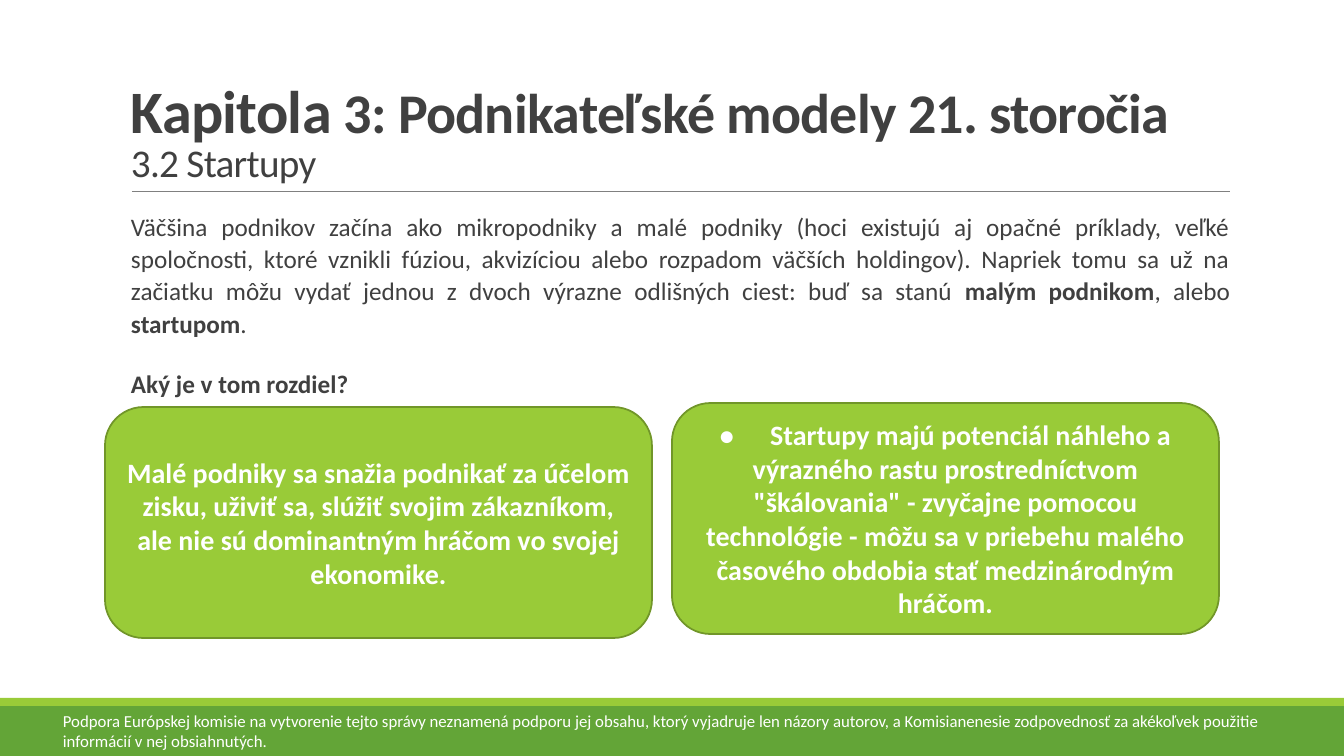
"""Build the slide on startups and small businesses."""
from lxml import etree
from pptx import Presentation
from pptx.dml.color import RGBColor
from pptx.enum.shapes import MSO_CONNECTOR, MSO_SHAPE
from pptx.enum.text import MSO_ANCHOR, PP_ALIGN
from pptx.oxml.ns import qn
from pptx.util import Pt

RECT, ROUND = MSO_SHAPE.RECTANGLE, MSO_SHAPE.ROUNDED_RECTANGLE
STRAIGHT = MSO_CONNECTOR.STRAIGHT
MIDDLE, BOTTOM = MSO_ANCHOR.MIDDLE, MSO_ANCHOR.BOTTOM
CENTER, JUSTIFY = PP_ALIGN.CENTER, PP_ALIGN.JUSTIFY

THEME = {
    "font": "Calibri",
    "green": RGBColor(0x63, 0xA5, 0x37),
    "lime": RGBColor(0x99, 0xCB, 0x38),
    "edge": RGBColor(0x71, 0x96, 0x29),
    "rule": RGBColor(0x80, 0x80, 0x80),
    "text": RGBColor(0x40, 0x40, 0x40),
    "white": RGBColor(0xFF, 0xFF, 0xFF),
    "chapter": 43, "title": 40, "subtitle": 28, "card": 20, "body": 18, "footer": 12,
}
EMU_PER_PX = 914400 / 100.8


def px(*lengths):
    return [round(n * EMU_PER_PX) for n in lengths]


def style(r, size, color, bold=False):
    r.font.name = THEME["font"]
    r.font.size = Pt(THEME[size])
    r.font.color.rgb = THEME[color]
    r.font.bold = bold


prs = Presentation()
prs.slide_width, prs.slide_height = px(1344, 756)
s = prs.slides.add_slide(prs.slide_layouts[6])

for color, top, height in [("green", 706, 50), ("lime", 698, 8)]:
    sp = s.shapes.add_shape(RECT, *px(0, top, 1344, height))
    sp.shadow.inherit = False
    sp.fill.solid()
    sp.fill.fore_color.rgb = THEME[color]
    sp.line.fill.background()

rule = s.shapes.add_connector(STRAIGHT, *px(132, 191, 1230, 191))
rule.line.color.rgb = THEME["rule"]
rule.line.width = Pt(0.5)
etree.SubElement(rule._element.spPr, qn("a:effectLst"))

tf = s.shapes.add_textbox(*px(121, 31, 1109, 160)).text_frame
tf.word_wrap = True
tf.vertical_anchor = BOTTOM
p = tf.paragraphs[0]
p.line_spacing = 0.85
for text, size, bold in [
    ("Kapitola", "chapter", True),
    ("\u00a03: Podnikateľské modely 21. storočia", "title", True),
    ("3.2 Startupy", "subtitle", False),
]:
    if size == "subtitle":
        p.add_line_break()
    r = p.add_run()
    r.text = text
    style(r, size, "text", bold)
    r._r.get_or_add_rPr().set("spc", "-50")

tf = s.shapes.add_textbox(*px(53, 706, 1240, 50)).text_frame
tf.word_wrap = True
tf.text = (
    "Podpora Európskej komisie na vytvorenie tejto správy neznamená podporu jej obsahu, "
    "ktorý vyjadruje len názory autorov, a Komisianenesie zodpovednosť za akékoľvek "
    "použitie informácií v nej obsiahnutých."
)
style(tf.paragraphs[0].runs[0], "footer", "white")

BODY = [
    [
        ("Väčšina podnikov začína ako mikropodniky a malé podniky (hoci existujú aj opačné "
         "príklady, veľké spoločnosti, ktoré vznikli fúziou, akvizíciou alebo rozpadom "
         "väčších holdingov). Napriek tomu sa už na začiatku môžu vydať jednou z dvoch "
         "výrazne odlišných ciest: buď sa stanú ", False),
        ("malým podnikom", True),
        (", alebo ", False),
        ("startupom", True),
        (".", False),
    ],
    [("Aký je v tom rozdiel?", True)],
]
tf = s.shapes.add_textbox(*px(121, 204, 1109, 255)).text_frame
tf.word_wrap = True
tf.margin_left, tf.margin_right = px(10, 0)
for i, pieces in enumerate(BODY):
    p = tf.add_paragraph() if i else tf.paragraphs[0]
    p.alignment = JUSTIFY
    p.line_spacing = 1.07
    p.space_before = Pt(12 if i else 0)
    p.space_after = Pt(8)
    for text, bold in pieces:
        r = p.add_run()
        r.text = text
        style(r, "body", "text", bold)

CARDS = [
    (105, 407, "Malé podniky sa snažia podnikať za účelom zisku, uživiť sa, slúžiť svojim "
               "zákazníkom, ale nie sú dominantným hráčom vo svojej ekonomike."),
    (672, 403, "•\tStartupy majú potenciál náhleho a výrazného rastu prostredníctvom "
               "\"škálovania\" - zvyčajne pomocou technológie - môžu sa v priebehu malého "
               "časového obdobia stať medzinárodným hráčom."),
]
for left, top, text in CARDS:
    sp = s.shapes.add_shape(ROUND, *px(left, top, 547, 231))
    sp.shadow.inherit = False
    sp.fill.solid()
    sp.fill.fore_color.rgb = THEME["lime"]
    sp.line.color.rgb = THEME["edge"]
    sp.line.width = Pt(1.25)
    tf = sp.text_frame
    tf.word_wrap = True
    tf.vertical_anchor = MIDDLE
    tf.text = text
    p = tf.paragraphs[0]
    p.alignment = CENTER
    style(p.runs[0], "card", "white", True)

prs.save("out.pptx")
